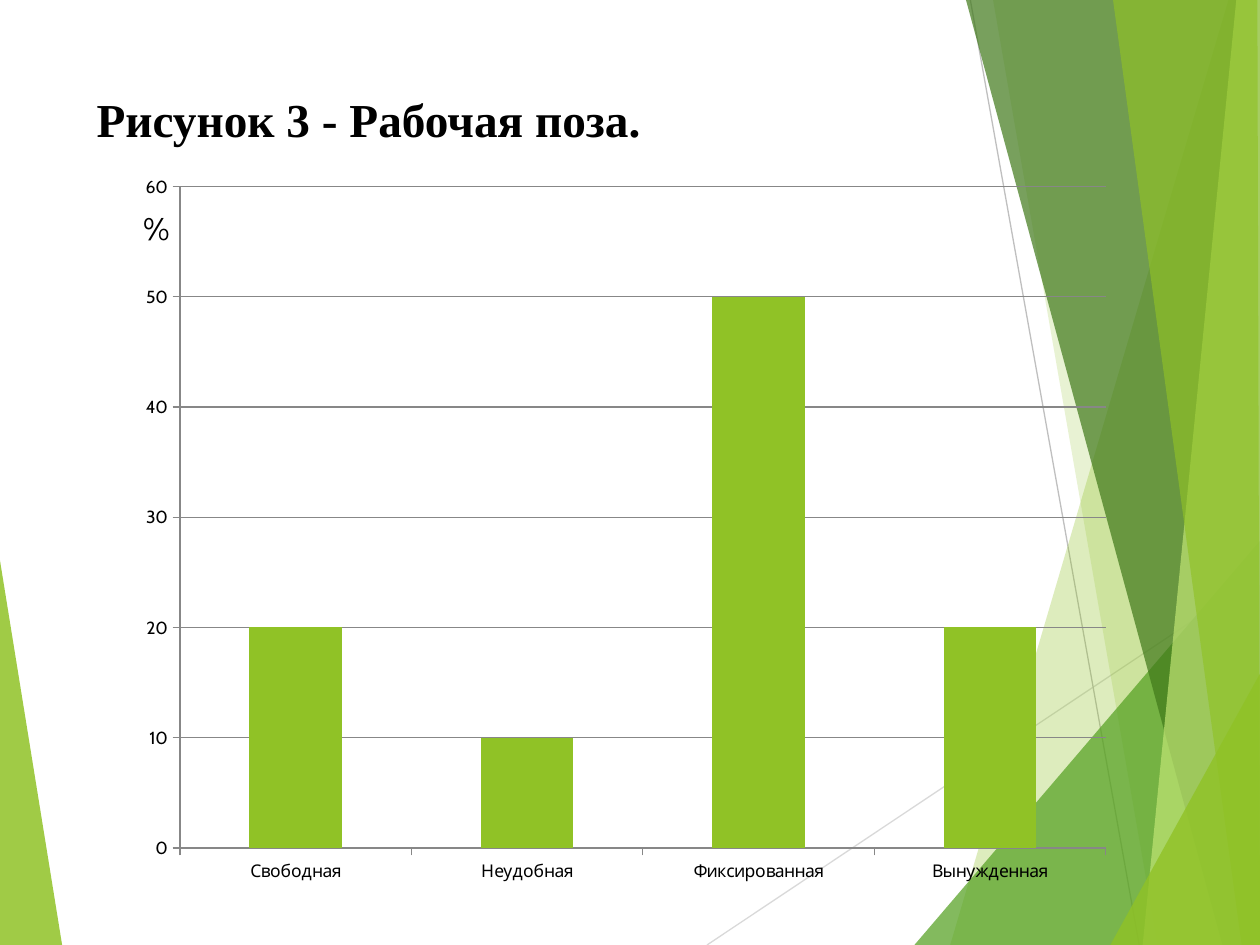
import pptx
import pptx.chart.data
import pptx.dml.color
import pptx.enum.chart
import pptx.enum.text
import pptx.oxml
import pptx.oxml.ns
import pptx.util
from lxml import etree

Pt = pptx.util.Pt
RGB = pptx.dml.color.RGBColor
qn = pptx.oxml.ns.qn

BLACK = RGB(0, 0, 0)
LIME = RGB(0x90, 0xC2, 0x26)
GREEN = RGB(0x54, 0xA0, 0x21)
DARK = RGB(0x3F, 0x78, 0x19)
PALE = RGB(0xC0, 0xE4, 0x74)
SILVER = RGB(0xD9, 0xD9, 0xD9)
GRAY = RGB(0xBF, 0xBF, 0xBF)
RULE = RGB(0x87, 0x87, 0x87)

WIDE, HIGH = 720, 540

# Colour, opacity in percent, corners in points
WEDGE = (LIME, 85, [(-0.7, 316), (35.5, HIGH), (-0.7, HIGH)])
LINES = [
    (SILVER, (404, HIGH), (WIDE, 329)),
    (GRAY, (554.5, 0), (651, HIGH)),
]
SHARDS = [
    (LIME, 30, [(702, 0), (543, HIGH), (WIDE, HIGH), (WIDE, 0)]),
    (LIME, 20, [(567.5, 0), (661.5, HIGH), (WIDE, HIGH), (WIDE, 0)]),
    (GREEN, 72, [(522.5, HIGH), (WIDE, 309), (WIDE, HIGH)]),
    (DARK, 70, [(552, 0), (698.5, HIGH), (WIDE, HIGH), (WIDE, 0)]),
    (PALE, 70, [(706.5, 0), (653, HIGH), (WIDE, HIGH), (WIDE, 0)]),
    (LIME, 65, [(636, 0), (709.5, HIGH), (WIDE, HIGH), (718.5, 0)]),
    (LIME, 80, [(634.5, HIGH), (WIDE, 385), (WIDE, HIGH)]),
]


def put(item, form):
    """Set each attribute named in form on item."""
    for name, value in form.items():
        setattr(item, name, value)


def add_shard(slide, left, top, color, alpha, dots):
    dots = [(Pt(left + x), Pt(top + y)) for x, y in dots]
    pen = slide.shapes.build_freeform(*dots[0])
    pen.add_line_segments(dots[1:], close=True)
    shard = pen.convert_to_shape()
    shard.shadow.inherit = False
    shard.fill.solid()
    shard.fill.fore_color.rgb = color
    shard.line.fill.background()
    tint = shard.fill._xPr.find(".//" + qn("a:srgbClr"))
    etree.SubElement(tint, qn("a:alpha")).set("val", str(alpha * 1000))


def add_line(slide, left, top, color, start, end):
    ends = [Pt(a + b) for dot in (start, end) for a, b in zip((left, top), dot)]
    line = slide.shapes.add_connector(
        pptx.enum.shapes.MSO_CONNECTOR.STRAIGHT, *ends)
    line.line.color.rgb = color
    line.line.width = Pt(0.75)
    etree.SubElement(line._element.spPr, qn("a:effectLst"))


def add_decor(slide, left, top):
    add_shard(slide, left, top, *WEDGE)
    for line in LINES:
        add_line(slide, left, top, *line)
    for shard in SHARDS:
        add_shard(slide, left, top, *shard)


def set_title(slide, left, top, width, height):
    title = slide.shapes.title
    put(title, dict(left=Pt(left), top=Pt(top),
                    width=Pt(width), height=Pt(height)))
    frame = title.text_frame
    put(frame, dict(text="Рисунок 3 - Рабочая поза.", word_wrap=True,
                    auto_size=pptx.enum.text.MSO_AUTO_SIZE.NONE,
                    vertical_anchor=pptx.enum.text.MSO_ANCHOR.TOP))
    para = frame.paragraphs[0]
    para.alignment = pptx.enum.text.PP_ALIGN.LEFT
    font = para.runs[0].font
    put(font, dict(name="Times New Roman", size=Pt(27), bold=True))
    font.color.rgb = BLACK


def set_layout(owner, **parts):
    """Fix the place of a chart part, in shares of the chart's box."""
    layout = owner.get_or_add_layout() if hasattr(
        owner, "get_or_add_layout") else owner.find(qn("c:layout"))
    if layout is None:
        layout = etree.Element(qn("c:layout"))
        owner.insert(0, layout)
    manual = etree.SubElement(layout, qn("c:manualLayout"))
    for name, value in parts.items():
        etree.SubElement(manual, qn("c:" + name)).set("val", str(value))


def add_bars(slide, left, top, width, height):
    data = pptx.chart.data.CategoryChartData()
    data.categories = ["Свободная", "Неудобная", "Фиксированная", "Вынужденная"]
    data.add_series("Series 1", [20, 10, 50, 20])
    chart = slide.shapes.add_chart(
        pptx.enum.chart.XL_CHART_TYPE.COLUMN_STACKED,
        Pt(left), Pt(top), Pt(width), Pt(height), data).chart
    put(chart, dict(has_legend=False, has_title=False))
    put(chart.font, dict(name="Cabin", size=Pt(10)))
    chart.font.color.rgb = BLACK

    plot = chart.plots[0]
    put(plot, dict(gap_width=150, overlap=100, vary_by_categories=False))
    fill = plot.series[0].format.fill
    fill.solid()
    fill.fore_color.rgb = LIME

    axis = chart.value_axis
    put(axis, dict(minimum_scale=0, maximum_scale=60, major_unit=10,
                   has_major_gridlines=True, has_title=True))
    for part in (axis, chart.category_axis):
        put(part, dict(
            major_tick_mark=pptx.enum.chart.XL_TICK_MARK.OUTSIDE,
            minor_tick_mark=pptx.enum.chart.XL_TICK_MARK.NONE))
    for part in (axis, chart.category_axis, axis.major_gridlines):
        part.format.line.color.rgb = RULE
        part.format.line.width = Pt(0.75)

    frame = axis.axis_title.text_frame
    frame.text = "%"
    font = frame.paragraphs[0].runs[0].font
    put(font, dict(name="Cabin", size=Pt(18), bold=False))
    font.color.rgb = BLACK
    body = frame._txBody.find(qn("a:bodyPr"))
    body.set("rot", "0")
    body.set("vert", "horz")

    set_layout(axis.axis_title._element,
               xMode="edge", yMode="edge", x=0.07, y=0.05)
    set_layout(chart._chartSpace.chart.plotArea, layoutTarget="inner",
               xMode="edge", yMode="edge", x=0.11, y=0.03, w=0.87, h=0.9)


def main():
    deck = pptx.Presentation()
    put(deck, dict(slide_width=Pt(WIDE), slide_height=Pt(HIGH)))
    slide = deck.slides.add_slide(deck.slide_layouts[5])
    add_decor(slide, 0, 0)
    set_title(slide, 48, 48, 500, 104)
    add_bars(slide, 36, 94, 608, 420)
    deck.save("out.pptx")


if __name__ == "__main__":
    main()
